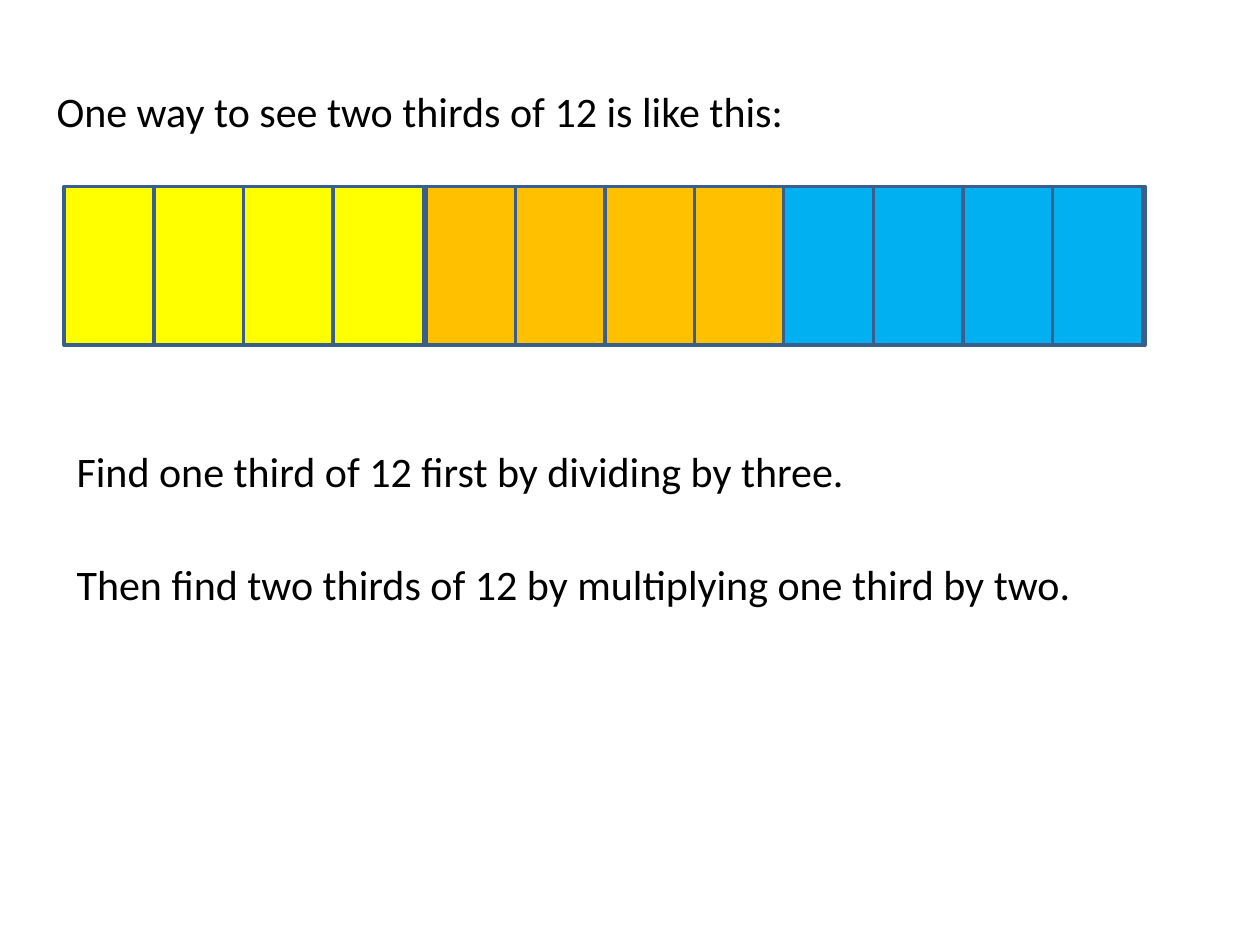
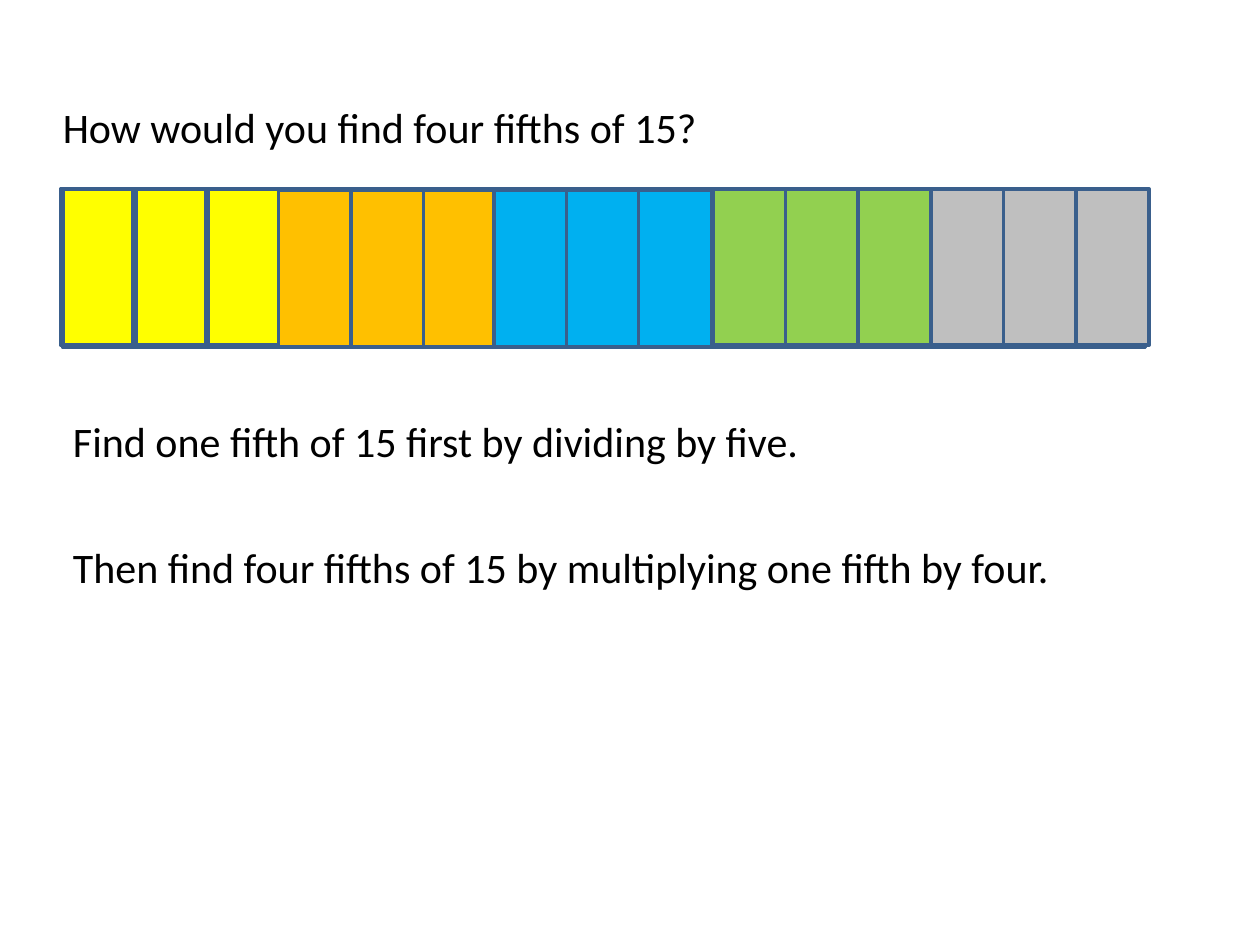
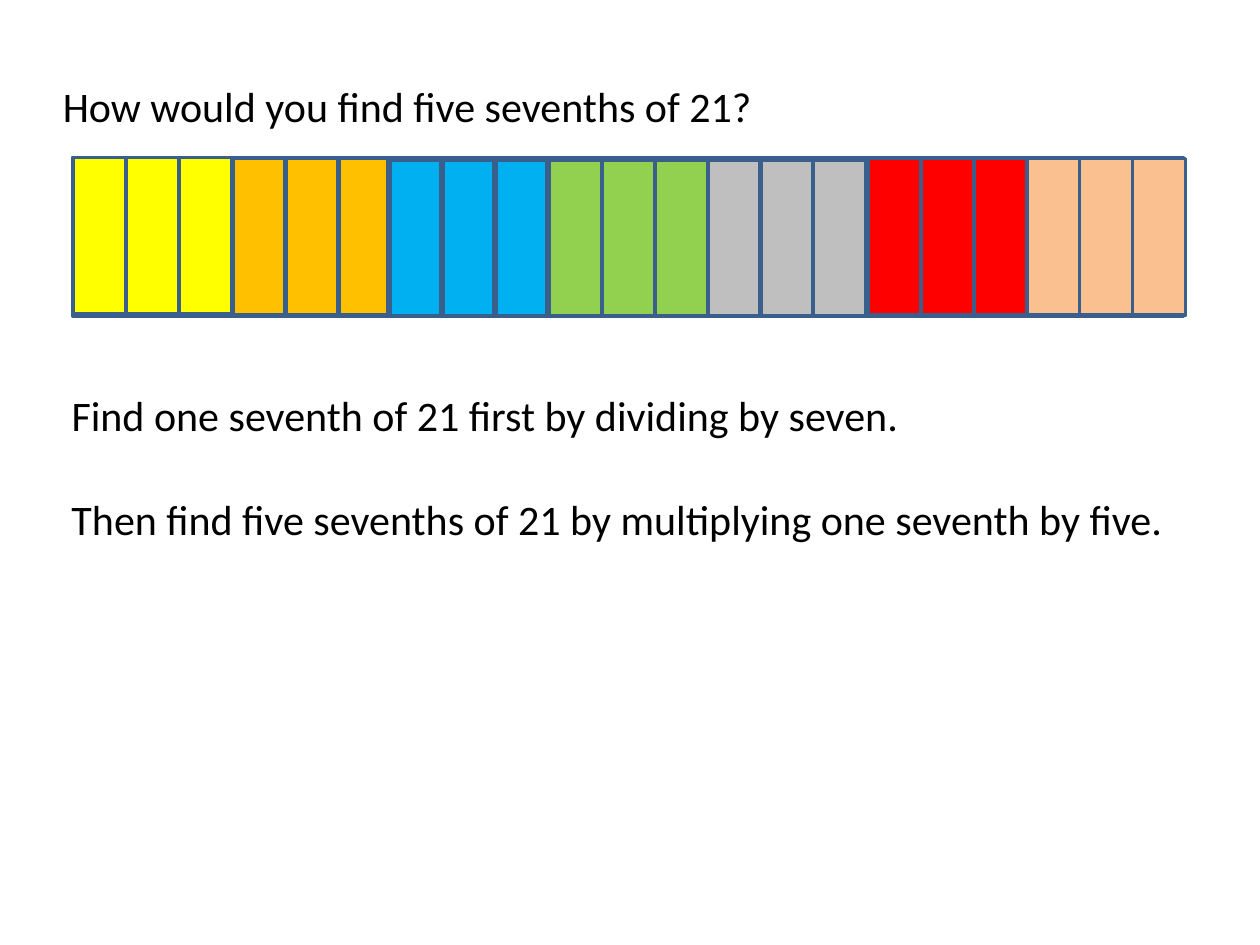
from dataclasses import dataclass

from pptx import Presentation
from pptx.dml.color import RGBColor
from pptx.enum.shapes import MSO_SHAPE
from pptx.util import Pt

RECT = MSO_SHAPE.RECTANGLE


@dataclass(frozen=True)
class Theme:
    font: str = "Calibri"
    size: float = 24
    ink: str = "000000"
    edge: str = "3A5F8C"
    stroke: float = 2
    tall: float = 90.7
    fills: tuple = ("FFFF00", "FFC000", "00B0F0", "92D050", "BFBFBF", "FF0000", "FAC090")


theme = Theme()


def add_text(slide, text, left, top, width, size=theme.size, color=theme.ink):
    box = slide.shapes.add_textbox(Pt(left), Pt(top), Pt(width), Pt(36))
    box.text_frame.word_wrap = True
    run = box.text_frame.paragraphs[0].add_run()
    run.text = text
    run.font.name = theme.font
    run.font.size = Pt(size)
    run.font.color.rgb = RGBColor.from_string(color)


def add_cell(slide, left, top, width, height, fill=None):
    cell = slide.shapes.add_shape(RECT, Pt(left), Pt(top), Pt(width), Pt(height))
    cell.shadow.inherit = False
    if fill:
        cell.fill.solid()
        cell.fill.fore_color.rgb = RGBColor.from_string(fill)
    else:
        cell.fill.background()
    cell.line.color.rgb = RGBColor.from_string(theme.edge)
    cell.line.width = Pt(theme.stroke)


pages = [
    dict(
        texts=[
            ("One way to see two thirds of 12 is like this:", 25.2, 45.4, 669),
            ("Find one third of 12 first by dividing by three.", 36.7, 251.3, 703),
            ("Then find two thirds of 12 by multiplying one third by two.", 36.7, 315.4, 703),
        ],
        bands=[(36.7, 106.6), (243.4, 106.6), (447.8, 106.6)],
        count=4, step=51.2, width=51.8, height=90.7,
        grid=(37, 106.6, 51.4), cells=[2, *range(4, 12)], under=0,
    ),
    dict(
        texts=[
            ("How would you find four fifths of 15?", 28.8, 54.7, 669),
            ("Find one fifth of 15 first by dividing by five.", 34.6, 234, 652),
            ("Then find four fifths of 15 by multiplying one fifth by four.", 34.6, 306, 703),
        ],
        bands=[(34.6, 108), (159.1, 108.7), (282.2, 108.7), (407.5, 108), (532.1, 108)],
        count=3, step=41.4, width=41.8, height=89.3,
        grid=(36, 108, 41.2), cells=range(15), under=1,
    ),
    dict(
        texts=[
            ("How would you find five sevenths of 21?", 28.8, 42.5, 669),
            ("Find one seventh of 21 first by dividing by seven.", 33.8, 218.9, 652),
            ("Then find five sevenths of 21 by multiplying one seventh by five.", 33.8, 278.6, 703),
        ],
        bands=[(41.8, 90), (133.2, 90.7), (221.8, 91.4), (313.9, 91.4),
               (404.6, 91.4), (496.1, 90.7), (586.8, 90.7)],
        count=3, step=30.2, width=30.4, height=89.3,
        grid=(41.8, 90, 30.2), cells=range(21), under=5,
    ),
]

deck = Presentation()
deck.slide_width = Pt(720)
deck.slide_height = Pt(540)

for page in pages:
    slide = deck.slides.add_slide(deck.slide_layouts[6])
    for text, left, top, width in page["texts"]:
        add_text(slide, text, left, top, width)
    for index, (start, top) in enumerate(page["bands"]):
        if index == page["under"]:
            origin, level, pitch = page["grid"]
            for col in page["cells"]:
                add_cell(slide, origin + col * pitch, level, page["width"], theme.tall)
        for part in range(page["count"]):
            add_cell(slide, start + part * page["step"], top,
                     page["width"], page["height"], theme.fills[index])

deck.save("out.pptx")
